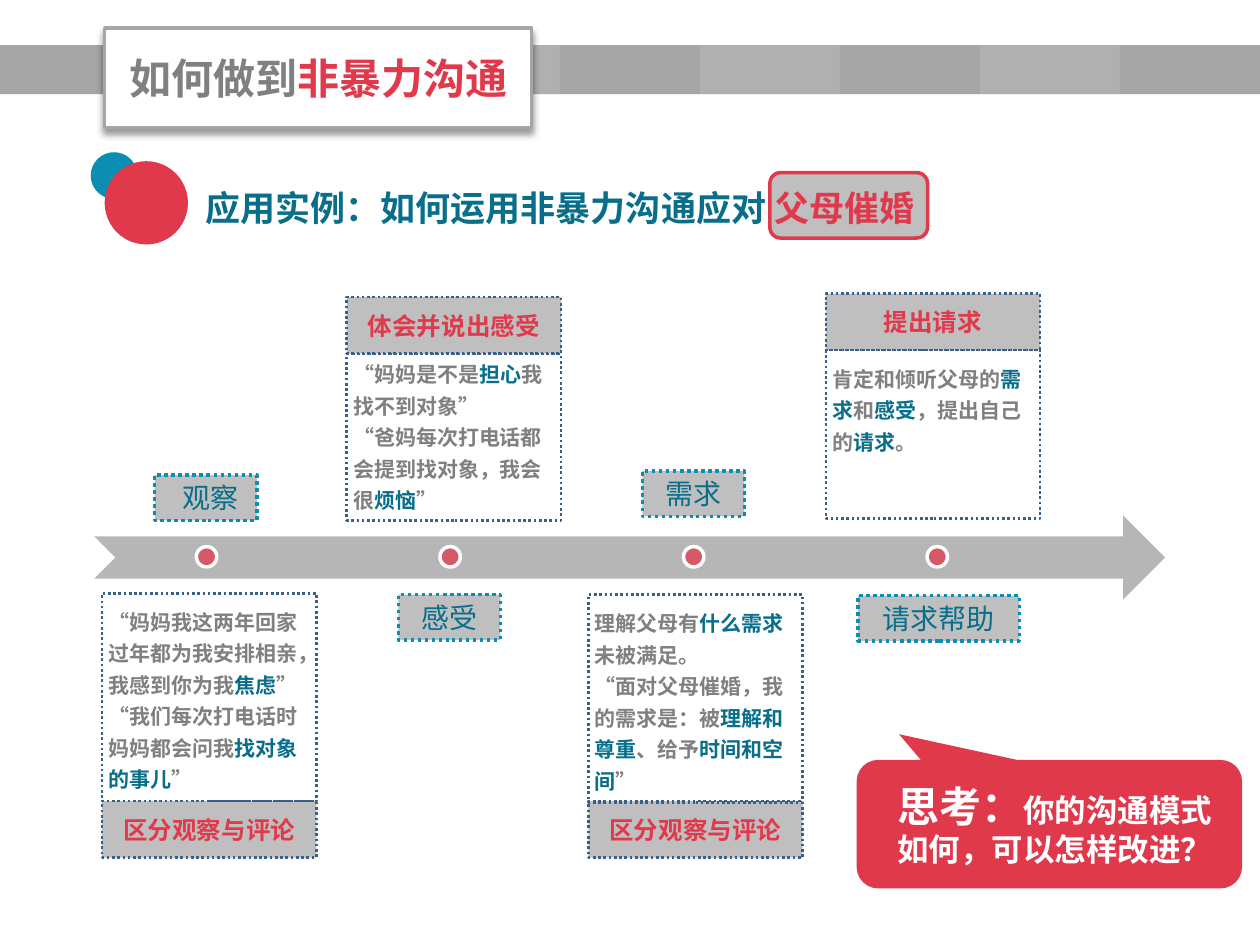
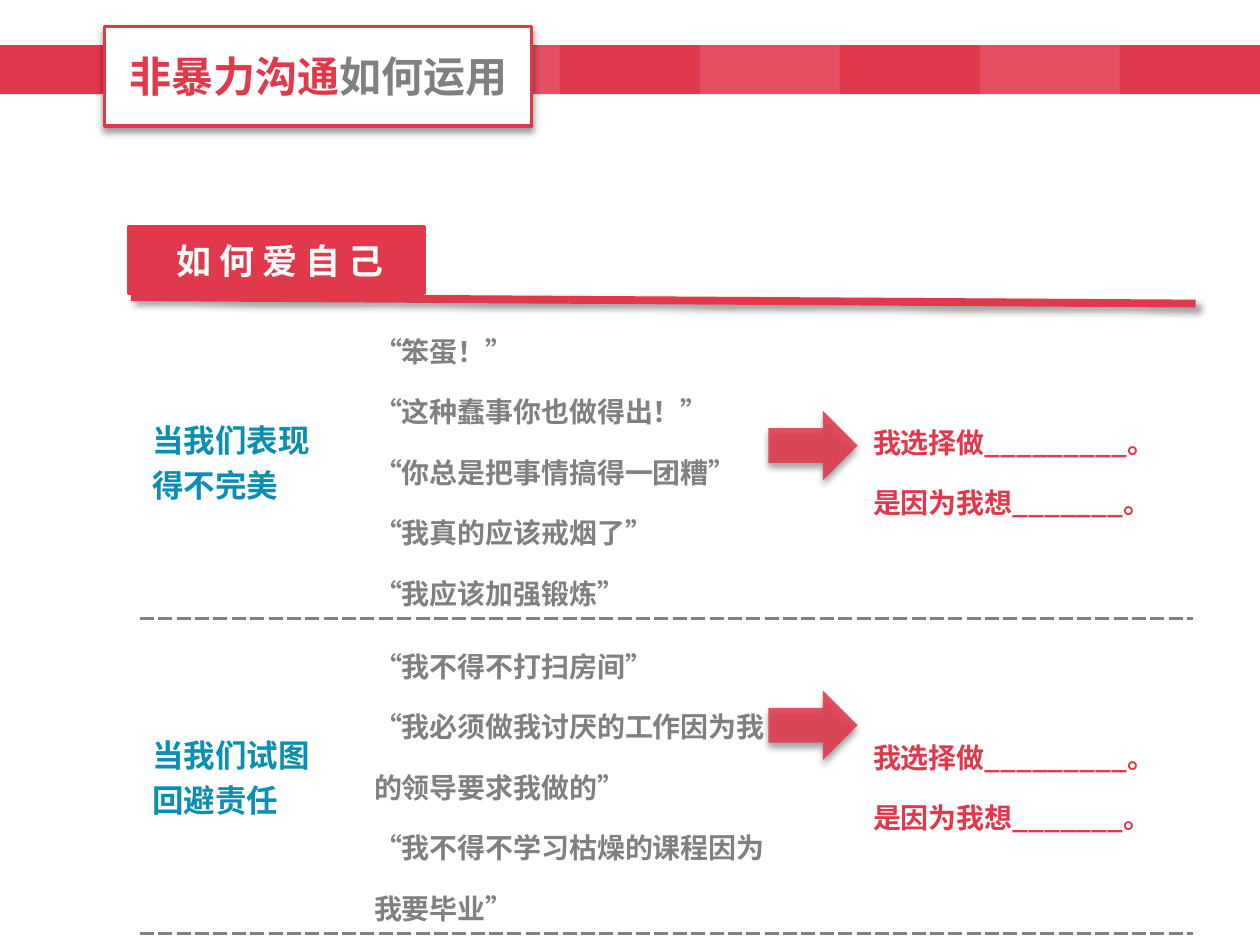
"""Build two slides on using nonviolent communication."""
from lxml.etree import SubElement
from pptx import Presentation
from pptx.dml.color import RGBColor
from pptx.enum.dml import MSO_LINE
from pptx.enum.lang import MSO_LANGUAGE_ID
from pptx.enum.shapes import MSO_CONNECTOR, MSO_SHAPE
from pptx.enum.text import MSO_ANCHOR, MSO_AUTO_SIZE, PP_ALIGN
from pptx.oxml.ns import qn
from pptx.util import Cm, Pt


class Theme:
    font = "Noto Sans CJK SC"
    red, rose = "E1394C", "E44E60"
    teal, aqua, navy = "086E8A", "0A8EB2", "3A5F8C"
    gray, steel, ash, pale = "808080", "A6A6A6", "B0B0B0", "BFBFBF"
    white, black = "FFFFFF", "000000"
    huge, head, large, label, sub, small = 24, 20, 18, 16, 14, 12


def style(shape, fill=None, line=None, width=2, dash=None, alpha=None, shade=None):
    """Set fill, outline and shadow of a shape or connector."""
    props = shape._element.spPr
    if fill:
        shape.fill.solid()
        shape.fill.fore_color.rgb = RGBColor.from_string(fill)
        if alpha:
            tint = props.find(qn("a:solidFill"))[0]
            SubElement(tint, qn("a:alpha"), val=str(alpha * 1000))
    elif hasattr(shape, "fill"):
        shape.fill.background()
    if line:
        shape.line.color.rgb = RGBColor.from_string(line)
        shape.line.width = Pt(width)
        if dash:
            shape.line.dash_style = dash
    else:
        shape.line.fill.background()
    effect = SubElement(props, qn("a:effectLst"))
    if shade:
        cast = SubElement(effect, qn("a:outerShdw"), blurRad=str(Pt(4)), dist=str(Pt(3)),
                          dir=str(shade * 60000), algn="t", rotWithShape="0")
        tint = SubElement(cast, qn("a:srgbClr"), val=Theme.black)
        SubElement(tint, qn("a:alpha"), val="40000")
    return shape


def write(frame, text, size, color, accent=None, big=None, bold=True, align=PP_ALIGN.LEFT,
          anchor=MSO_ANCHOR.MIDDLE, space=None, inset=None):
    """Fill a frame; newlines part paragraphs and asterisks enclose accents."""
    if hasattr(frame, "auto_size"):
        frame.word_wrap = True
        frame.auto_size = MSO_AUTO_SIZE.NONE
        frame.vertical_anchor = anchor
    if inset:
        (frame.margin_left, frame.margin_top,
         frame.margin_right, frame.margin_bottom) = map(Cm, inset)
    for i, row in enumerate(text.split("\n")):
        para = frame.add_paragraph() if i else frame.paragraphs[0]
        para.alignment = align
        if space:
            para.line_spacing = space
        for j, piece in enumerate(row.split("*")):
            if not piece:
                continue
            run = para.add_run()
            run.text = piece
            font = run.font
            font.name, font.bold = Theme.font, bold
            font.size = Pt(big if j % 2 and big else size)
            font.color.rgb = RGBColor.from_string(accent if j % 2 and accent else color)
            font.language_id = MSO_LANGUAGE_ID.SIMPLIFIED_CHINESE
            SubElement(run._r.rPr, qn("a:ea"), typeface=Theme.font)


deck = Presentation()
deck.slide_width, deck.slide_height = Cm(25.4), Cm(19.05)
pages = []
heads = [
    ("如何做到*非暴力沟通*", 0.56, Theme.steel, Theme.ash),
    ("*非暴力沟通*如何运用", 0.53, Theme.red, Theme.rose),
]
step = 25.4 / 9
for text, top, base, tint in heads:
    page = deck.slides.add_slide(deck.slide_layouts[5])
    pages.append(page)
    for i in (0, *range(3, 9)):
        band = page.shapes.add_shape(MSO_SHAPE.RECTANGLE, Cm(step * i), Cm(0.91), Cm(step), Cm(0.99))
        style(band, tint if i % 2 else base)
    title = page.shapes.title
    title.left, title.top, title.width, title.height = map(Cm, (2.11, top, 8.61, 2.01))
    style(title, Theme.white, base, shade=90)
    write(title.text_frame, text, Theme.huge, Theme.gray, Theme.red, align=PP_ALIGN.CENTER)
    page.shapes._spTree.append(title._element)

shapes = pages[0].shapes
for left, top, size, color in [(1.83, 3.07, 0.94, Theme.aqua), (2.11, 3.25, 1.68, Theme.red)]:
    style(shapes.add_shape(MSO_SHAPE.OVAL, Cm(left), Cm(top), Cm(size), Cm(size)), color)
pill = shapes.add_shape(MSO_SHAPE.ROUNDED_RECTANGLE, Cm(15.52), Cm(3.48), Cm(3.18), Cm(1.32))
style(pill, Theme.pale, Theme.red)
topic = shapes.add_textbox(Cm(3.89), Cm(3.63), Cm(15.01), Cm(1.12))
write(topic.text_frame, "应用实例：如何运用非暴力沟通应对 *父母催婚*", Theme.head, Theme.teal,
      Theme.red, anchor=MSO_ANCHOR.TOP)

arrow = shapes.add_shape(MSO_SHAPE.NOTCHED_RIGHT_ARROW, Cm(1.9), Cm(10.39), Cm(21.59), Cm(1.7))
style(arrow, Theme.gray, alpha=57)
for i in range(4):
    dot = shapes.add_shape(MSO_SHAPE.OVAL, Cm(3.96 + 4.91 * i), Cm(11.02), Cm(0.41), Cm(0.41))
    style(dot, Theme.red, Theme.white, alpha=74)

labels = [
    ("观察", 3.12, 9.58, 2.06, 0.18),
    ("感受", 8.03, 11.99, 2.06, 0),
    ("需求", 12.95, 9.5, 2.06, 0),
    ("请求帮助", 17.3, 12.01, 3.25, 0),
]
for text, left, top, width, shift in labels:
    tag = shapes.add_shape(MSO_SHAPE.RECTANGLE, Cm(left), Cm(top), Cm(width), Cm(0.91))
    style(tag, Theme.pale, Theme.aqua, dash=MSO_LINE.ROUND_DOT)
    write(tag.text_frame, text, Theme.label, Theme.teal, bold=False, align=PP_ALIGN.CENTER,
          inset=(shift, 0, 0, 0))

cards = [
    ("区分观察与评论", 16.15, 2.06, 11.96, 4.19, 0.2,
     "“妈妈我这两年回家过年都为我安排相亲，我感到你为我*焦虑*”\n"
     "“我们每次打电话时妈妈都会问我*找对象的事儿*”"),
    ("体会并说出感受", 5.99, 6.99, 7.14, 3.35, 0.03,
     "“妈妈是不是*担心*我找不到对象”\n“爸妈每次打电话都会提到找对象，我会很*烦恼*”"),
    ("区分观察与评论", 16.15, 11.86, 11.99, 4.19, 0.2,
     "理解父母有*什么需求*未被满足。\n"
     "“面对父母催婚，我的需求是：被*理解和尊重*、给予*时间和空间*”"),
    ("提出请求", 5.92, 16.65, 7.06, 3.4, 0.2,
     "肯定和倾听父母的*需求*和*感受*，提出自己的*请求*。"),
]
for name, rise, left, top, height, pad, text in cards:
    cap = shapes.add_shape(MSO_SHAPE.RECTANGLE, Cm(left), Cm(rise), Cm(4.32), Cm(1.14))
    style(cap, Theme.pale, Theme.navy, 1.5, MSO_LINE.ROUND_DOT)
    write(cap.text_frame, name, Theme.sub, Theme.red, align=PP_ALIGN.CENTER)
    card = shapes.add_shape(MSO_SHAPE.RECTANGLE, Cm(left), Cm(top), Cm(4.32), Cm(height))
    style(card, line=Theme.navy, width=1.5, dash=MSO_LINE.ROUND_DOT)
    write(card.text_frame, text, Theme.small, Theme.gray, Theme.teal, anchor=MSO_ANCHOR.TOP,
          space=Pt(18), inset=(0.13, pad, 0.25, 0))

call = shapes.add_shape(MSO_SHAPE.ROUNDED_RECTANGULAR_CALLOUT, Cm(17.27), Cm(15.32), Cm(7.77), Cm(2.59))
call.adjustments[0], call.adjustments[1] = -0.39, -0.7
style(call, Theme.red)
write(call.text_frame, "*思考：*你的沟通模式如何，可以怎样改进？", Theme.large, Theme.white,
      big=Theme.huge, inset=(0.69, 0, 0.3, 0))

shapes = pages[1].shapes
rows = [
    ("当我们表现\n得不完美",
     "“笨蛋！”\n“这种蠢事你也做得出！”\n“你总是把事情搞得一团糟”\n“我真的应该戒烟了”\n“我应该加强锻炼”"),
    ("当我们试图\n回避责任",
     "“我不得不打扫房间”\n“我必须做我讨厌的工作因为我\n的领导要求我做的”\n"
     "“我不得不学习枯燥的课程因为\n我要毕业”"),
]
choice = "我选择做_________。\n是因为我想_______。"
looks = [
    (Theme.large, Theme.aqua, None, 0.25),
    (Theme.label, Theme.gray, 1.5, 0.25),
    (Theme.label, Theme.red, 1.5, 1.14),
]
grid = shapes.add_table(2, 3, Cm(2.82), Cm(6.12), Cm(21.23), Cm(11.43)).table
grid.first_row = grid.horz_banding = False
grid._tbl.tblPr.find(qn("a:tableStyleId")).text = "{2D5ABB26-0587-4C30-8999-92F81FD0307C}"
for col, width in zip(grid.columns, (4.47, 9.17, 7.59)):
    col.width = Cm(width)
for i, height in enumerate((5.41, 6.02)):
    grid.rows[i].height = Cm(height)
    for j, (size, color, space, pad) in enumerate(looks):
        cell = grid.cell(i, j)
        cell.vertical_anchor = MSO_ANCHOR.MIDDLE
        cell.margin_left = Cm(pad)
        write(cell.text_frame, (*rows[i], choice)[j], size, color, space=space)
        cell.fill.background()
        props = cell._tc.get_or_add_tcPr()
        edge = SubElement(props, qn("a:lnB"), w=str(Pt(2.25)))
        SubElement(SubElement(edge, qn("a:solidFill")), qn("a:srgbClr"), val=Theme.gray)
        SubElement(edge, qn("a:prstDash"), val="sysDash")
        props.insert(0, edge)

rule = shapes.add_connector(MSO_CONNECTOR.STRAIGHT, Cm(2.64), Cm(5.99), Cm(24.1), Cm(6.12))
style(rule, line=Theme.red, width=4.5, shade=45)
flag = shapes.add_shape(MSO_SHAPE.RECTANGLE, Cm(2.59), Cm(4.57), Cm(5.97), Cm(1.35))
style(flag, Theme.red, Theme.red)
write(flag.text_frame, "如 何 爱 自 己", Theme.head, Theme.white, align=PP_ALIGN.CENTER,
      inset=(0.15, 0, 0, 0))
for top in (8.28, 13.92):
    arrow = shapes.add_shape(MSO_SHAPE.RIGHT_ARROW, Cm(15.49), Cm(top), Cm(1.8), Cm(1.4))
    style(arrow, Theme.red, alpha=88, shade=90)

deck.save("out.pptx")
